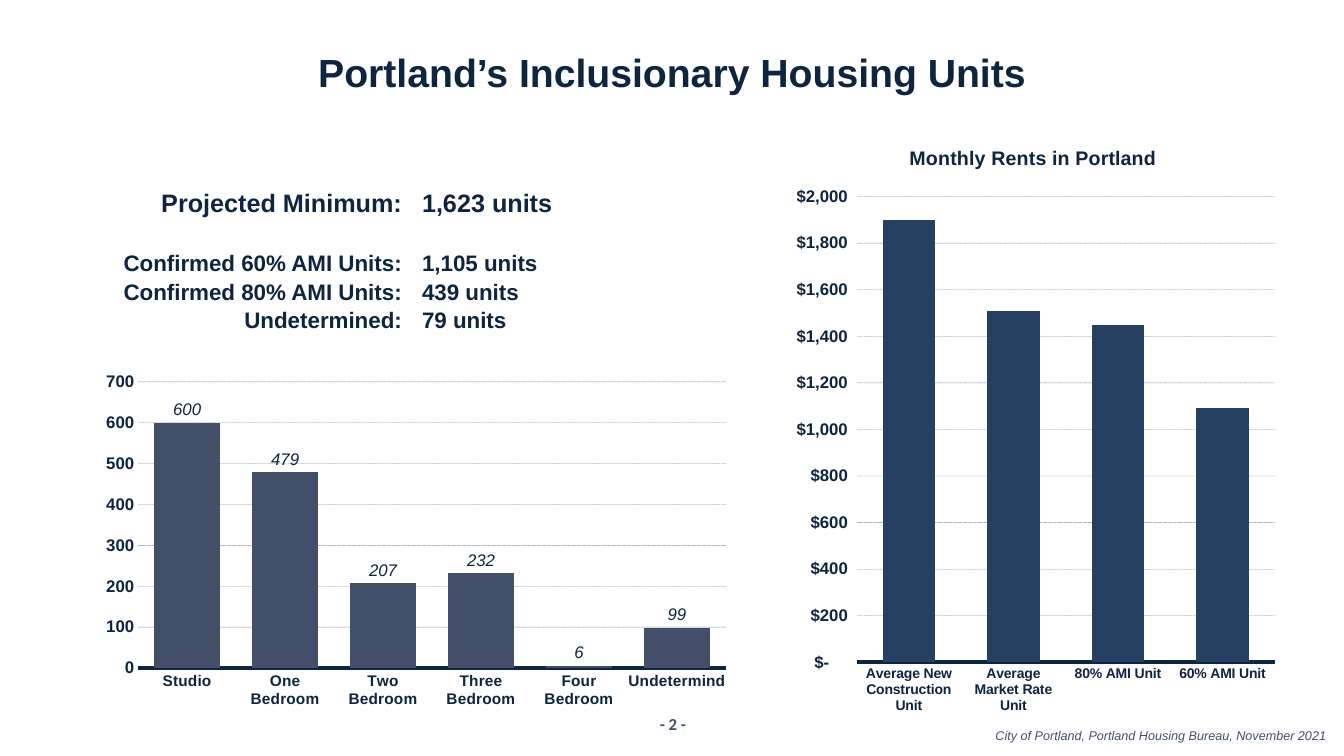
from lxml import etree
from pptx import Presentation
from pptx.chart.data import CategoryChartData
from pptx.dml.color import RGBColor
from pptx.enum.chart import XL_CHART_TYPE as ChartType, XL_LABEL_POSITION as LabelPosition, XL_TICK_MARK as TickMark
from pptx.enum.dml import MSO_LINE as LineStyle
from pptx.enum.text import PP_ALIGN as Align
from pptx.oxml import parse_xml
from pptx.oxml.ns import nsdecls, qn
from pptx.util import Emu, Pt

PX = 914400 / 100.8
NAVY, SLATE, BLUE = "0F243E", "434F69", "254061"
DOLLARS = '_("$"* #,##0_);_("$"* \\(#,##0\\);_("$"* "-"??_);_(@_)'


def set_font(font, size, color=NAVY, bold=True, italic=False, name="Arial"):
    font.size, font.bold, font.italic, font.name = Pt(size), bold, italic, name
    font.color.rgb = RGBColor.from_string(color)


def add_text(lines, box, sizes, align=Align.LEFT, inset=10, gaps=(0,), **style):
    shape = slide.shapes.add_textbox(*[Emu(round(n * PX)) for n in box])
    frame = shape.text_frame
    frame.word_wrap = True
    frame.margin_left = frame.margin_right = Emu(round(inset * PX))
    frame.margin_top = frame.margin_bottom = Emu(round(inset / 2 * PX))
    frame.text = "\n".join(lines)
    for paragraph, size, gap in zip(frame.paragraphs, sizes, gaps):
        paragraph.alignment = align
        if gap:
            paragraph.space_before = Pt(gap)
        set_font(paragraph.runs[0].font, size, **style)


presentation = Presentation()
presentation.slide_width = Emu(round(1344 * PX))
presentation.slide_height = Emu(round(756 * PX))
slide = presentation.slides.add_slide(presentation.slide_layouts[6])

add_text(["Portland’s Inclusionary Housing Units"], (76, 48, 1192, 47), [28], Align.CENTER, 0)

unit_format = dict(sizes=[18, 16, 16, 16], gaps=[0, 23, 1, 1])
add_text(["Projected Minimum:", "Confirmed 60% AMI Units:", "Confirmed 80% AMI Units:", "Undetermined:"],
         (76, 182, 336, 183), align=Align.RIGHT, **unit_format)
add_text(["1,623 units", "1,105 units", "439 units", "79 units"], (412, 182, 151, 183), **unit_format)

add_text(["City of Portland, Portland Housing Bureau, November 2021"], (955, 723, 381, 25), [9],
         Align.RIGHT, color=SLATE, bold=False, italic=True)
add_text(["- 2 -"], (628, 714, 90, 20), [12], Align.CENTER, 0, color=SLATE, name="Calibri")

bedrooms = dict(
    box=(93, 368, 646, 349), plot=(0.07, 0.04, 0.91, 0.82), color=SLATE, gap=50, overlap=0,
    maximum=700, step=100, number_format="General", category_size=11, axis_width=2.5, title=None,
    units={"Studio": 600, "One\nBedroom": 479, "Two\nBedroom": 207,
           "Three\nBedroom": 232, "Four\nBedroom": 6, "Undetermind": 99})
rents = dict(
    box=(781, 124, 504, 605), plot=(0.15, 0.12, 0.83, 0.77), color=BLUE, gap=100, overlap=-25,
    maximum=2000, step=200, number_format=DOLLARS, category_size=10, axis_width=3,
    title="Monthly Rents in Portland",
    units={"Average New\nConstruction\nUnit": 1900, "Average\nMarket Rate\nUnit": 1510,
           "80% AMI Unit": 1450, "60% AMI Unit": 1090})

for item in (bedrooms, rents):
    data = CategoryChartData()
    data.categories = list(item["units"])
    data.add_series("Series 1", list(item["units"].values()))
    chart = slide.shapes.add_chart(
        ChartType.COLUMN_CLUSTERED, *[Emu(round(n * PX)) for n in item["box"]], data).chart
    chart.has_legend = False
    set_font(chart.font, 10)

    plot = chart.plots[0]
    plot.vary_by_categories = False
    plot.gap_width, plot.overlap = item["gap"], item["overlap"]
    fill = plot.series[0].format.fill
    fill.solid()
    fill.fore_color.rgb = RGBColor.from_string(item["color"])

    categories, values = chart.category_axis, chart.value_axis
    for axis, size in ((categories, item["category_size"]), (values, 12)):
        axis.major_tick_mark = axis.minor_tick_mark = TickMark.NONE
        set_font(axis.tick_labels.font, size)
    categories.format.line.color.rgb = RGBColor.from_string(NAVY)
    categories.format.line.width = Pt(item["axis_width"])
    values.format.line.fill.background()
    values.minimum_scale, values.maximum_scale = 0, item["maximum"]
    values.major_unit = item["step"]
    values.tick_labels.number_format = item["number_format"]
    values.tick_labels.number_format_is_linked = False
    grid = values.major_gridlines.format.line
    grid.color.rgb = RGBColor.from_string(NAVY)
    grid.width = Pt(0.25)
    grid.dash_style = LineStyle.SQUARE_DOT
    grid_color = values.major_gridlines._xAx.find(".//" + qn("c:majorGridlines")).find(".//" + qn("a:srgbClr"))
    etree.SubElement(grid_color, qn("a:alpha")).set("val", "50000")

    plot_area = chart._chartSpace.find(".//" + qn("c:plotArea"))
    for layout in plot_area.findall(qn("c:layout")):
        plot_area.remove(layout)
    x, y, width, height = item["plot"]
    plot_area.insert(0, parse_xml(
        f'<c:layout {nsdecls("c")}><c:manualLayout><c:layoutTarget val="inner"/>'
        f'<c:xMode val="edge"/><c:yMode val="edge"/><c:x val="{x}"/><c:y val="{y}"/>'
        f'<c:w val="{width}"/><c:h val="{height}"/></c:manualLayout></c:layout>'))

    chart.has_title = item["title"] is not None
    if item["title"]:
        chart.chart_title.text_frame.text = item["title"]
        set_font(chart.chart_title.text_frame.paragraphs[0].runs[0].font, 14)
        chart.chart_title.include_in_layout = False
    else:
        plot.has_data_labels = True
        labels = plot.data_labels
        labels.show_value = True
        labels.position = LabelPosition.OUTSIDE_END
        set_font(labels.font, 12, bold=False, italic=True)

presentation.save("out.pptx")
